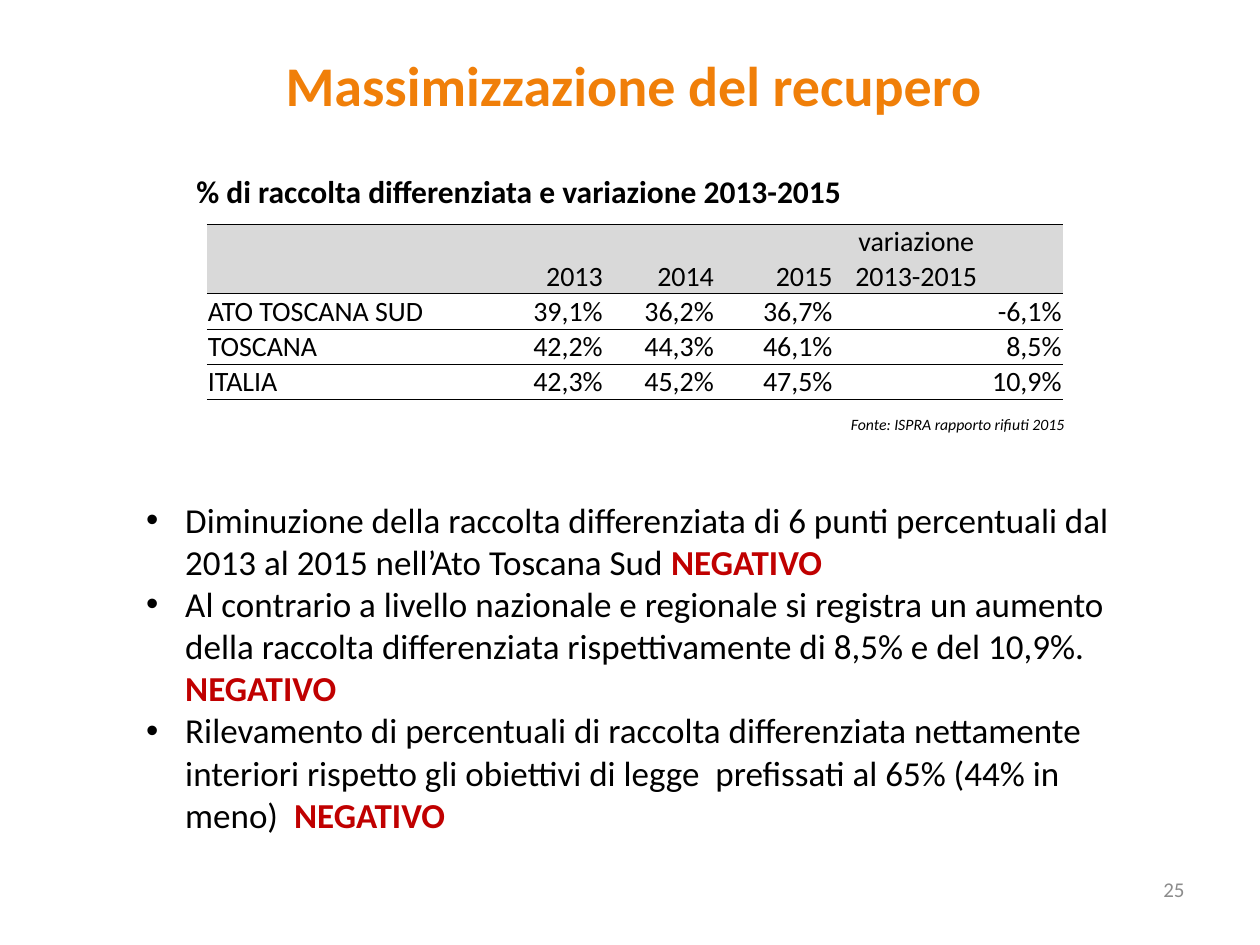
"""Build the slide on waste recovery with its table and remarks."""
from dataclasses import dataclass

from lxml import etree
from pptx import Presentation
from pptx.dml.color import RGBColor
from pptx.enum.text import MSO_ANCHOR, MSO_AUTO_SIZE, PP_ALIGN
from pptx.oxml.ns import qn
from pptx.util import Cm, Pt

LEFT, CENTER, RIGHT = PP_ALIGN.LEFT, PP_ALIGN.CENTER, PP_ALIGN.RIGHT
TOP, MIDDLE, BOTTOM = MSO_ANCHOR.TOP, MSO_ANCHOR.MIDDLE, MSO_ANCHOR.BOTTOM
FIXED = MSO_AUTO_SIZE.NONE

BLACK = RGBColor(0x00, 0x00, 0x00)
ORANGE = RGBColor(0xF0, 0x7F, 0x09)
RED = RGBColor(0xC0, 0x00, 0x00)
PALE = RGBColor(0xD9, 0xD9, 0xD9)
GRAY = RGBColor(0x8C, 0x8C, 0x8C)
FONT = "Calibri"


@dataclass(frozen=True)
class Box:
    left: float
    top: float
    width: float
    height: float

    def lengths(self) -> tuple:
        return Cm(self.left), Cm(self.top), Cm(self.width), Cm(self.height)


@dataclass(frozen=True)
class Label:
    text: str
    box: Box
    size: int
    color: RGBColor = BLACK
    bold: bool = False
    italic: bool = False
    align: PP_ALIGN = LEFT
    anchor: MSO_ANCHOR = TOP


@dataclass(frozen=True)
class Remark:
    text: str
    verdict: str = "NEGATIVO"


TITLE = Box(0.08, 0.79, 25.4, 1.83)
BODY = Box(2.69, 9.93, 20.62, 7.09)
GRID = Box(4.17, 4.52, 17.25, 3.5)
COLS = (4.75, 3.25, 2.24, 2.39, 4.62)
ROWS = (1.4, 0.7, 0.7, 0.7)
DATA = (
    ("", "2013", "2014", "2015", "variazione\n2013-2015"),
    ("ATO TOSCANA SUD", "39,1%", "36,2%", "36,7%", "-6,1%"),
    ("TOSCANA", "42,2%", "44,3%", "46,1%", "8,5%"),
    ("ITALIA", "42,3%", "45,2%", "47,5%", "10,9%"),
)
LABELS = (
    Label("Fonte: ISPRA rapporto rifiuti 2015", Box(15.29, 8.23, 8.03, 0.64), 9,
          italic=True, align=CENTER),
    Label("% di raccolta differenziata e variazione 2013-2015",
          Box(3.71, 3.35, 21.69, 1.02), 18, bold=True),
    Label("25", Box(18.21, 17.53, 5.92, 0.79), 12, GRAY, align=RIGHT, anchor=MIDDLE),
)
REMARKS = (
    Remark("Diminuzione della raccolta differenziata di 6 punti percentuali "
           "dal 2013 al 2015 nell’Ato Toscana Sud "),
    Remark("Al contrario a livello nazionale e regionale si registra un aumento "
           "della raccolta differenziata rispettivamente di 8,5% e del 10,9%. "),
    Remark("Rilevamento di percentuali di raccolta differenziata nettamente "
           "interiori rispetto gli obiettivi di legge  prefissati al 65% "
           "(44% in meno)  "),
)


def write(para, text: str, *, size: int, color: RGBColor = BLACK, bold: bool = False,
          italic: bool = False, align: PP_ALIGN = LEFT) -> None:
    para.alignment = align
    run = para.add_run()
    run.text = text
    font = run.font
    font.name, font.size, font.bold, font.italic = FONT, Pt(size), bold, italic
    font.color.rgb = color


def place(shape, box: Box) -> None:
    shape.left, shape.top, shape.width, shape.height = box.lengths()


def add_label(slide, label: Label) -> None:
    frame = slide.shapes.add_textbox(*label.box.lengths()).text_frame
    frame.word_wrap = True
    frame.vertical_anchor = label.anchor
    write(frame.paragraphs[0], label.text, size=label.size, color=label.color,
          bold=label.bold, italic=label.italic, align=label.align)


def add_title(slide, text: str) -> None:
    title = slide.shapes.title
    place(title, TITLE)
    frame = title.text_frame
    frame.auto_size, frame.vertical_anchor = FIXED, MIDDLE
    write(frame.paragraphs[0], text, size=32, color=ORANGE, bold=True, align=CENTER)


def add_body(slide) -> None:
    body = slide.placeholders[1]
    place(body, BODY)
    frame = body.text_frame
    frame.auto_size, frame.vertical_anchor = FIXED, TOP
    for i, item in enumerate(REMARKS):
        para = frame.add_paragraph() if i else frame.paragraphs[0]
        props = para._p.get_or_add_pPr()
        props.set("marL", str(Cm(0.79)))
        props.set("indent", str(-Cm(0.79)))
        etree.SubElement(props, qn("a:buFont"), typeface="Arial")
        etree.SubElement(props, qn("a:buChar"), char="•")
        para.space_before = Pt(0)
        write(para, item.text, size=20)
        write(para, item.verdict, size=20, color=RED, bold=True)


def rule(cell, sides: str) -> None:
    props = cell._tc.get_or_add_tcPr()
    for i, side in enumerate("LRTB"):
        line = etree.Element(qn(f"a:ln{side}"), w=str(Pt(0.5)))
        if side in sides:
            fill = etree.SubElement(line, qn("a:solidFill"))
            etree.SubElement(fill, qn("a:srgbClr"), val=str(BLACK))
        else:
            etree.SubElement(line, qn("a:noFill"))
        props.insert(i, line)


def fill_cell(cell, text: str, align: PP_ALIGN, head: bool) -> None:
    cell.margin_left = cell.margin_right = cell.margin_top = Cm(0.02)
    cell.margin_bottom = Cm(0)
    cell.vertical_anchor = BOTTOM
    if head:
        cell.fill.solid()
        cell.fill.fore_color.rgb = PALE
    else:
        cell.fill.background()
    rule(cell, "TB")
    frame = cell.text_frame
    for i, part in enumerate(text.split("\n")):
        para = frame.add_paragraph() if i else frame.paragraphs[0]
        write(para, part, size=16, align=align)


def add_grid(slide) -> None:
    table = slide.shapes.add_table(len(ROWS), len(COLS), *GRID.lengths()).table
    table.first_row = table.horz_banding = False
    for col, width in zip(table.columns, COLS):
        col.width = Cm(width)
    for r, (height, row) in enumerate(zip(ROWS, DATA)):
        table.rows[r].height = Cm(height)
        for c, text in enumerate(row):
            align = LEFT if c == 0 else CENTER if "\n" in text else RIGHT
            fill_cell(table.cell(r, c), text, align, r == 0)
    first = table.cell(0, len(COLS) - 1).text_frame.paragraphs[0]
    first._p.get_or_add_pPr().set("marR", str(Cm(1.28)))


def main() -> None:
    deck = Presentation()
    deck.slide_width, deck.slide_height = Cm(25.4), Cm(19.05)
    slide = deck.slides.add_slide(deck.slide_layouts[1])
    add_title(slide, "Massimizzazione del recupero")
    add_body(slide)
    add_grid(slide)
    for label in LABELS:
        add_label(slide, label)
    deck.save("out.pptx")


if __name__ == "__main__":
    main()
